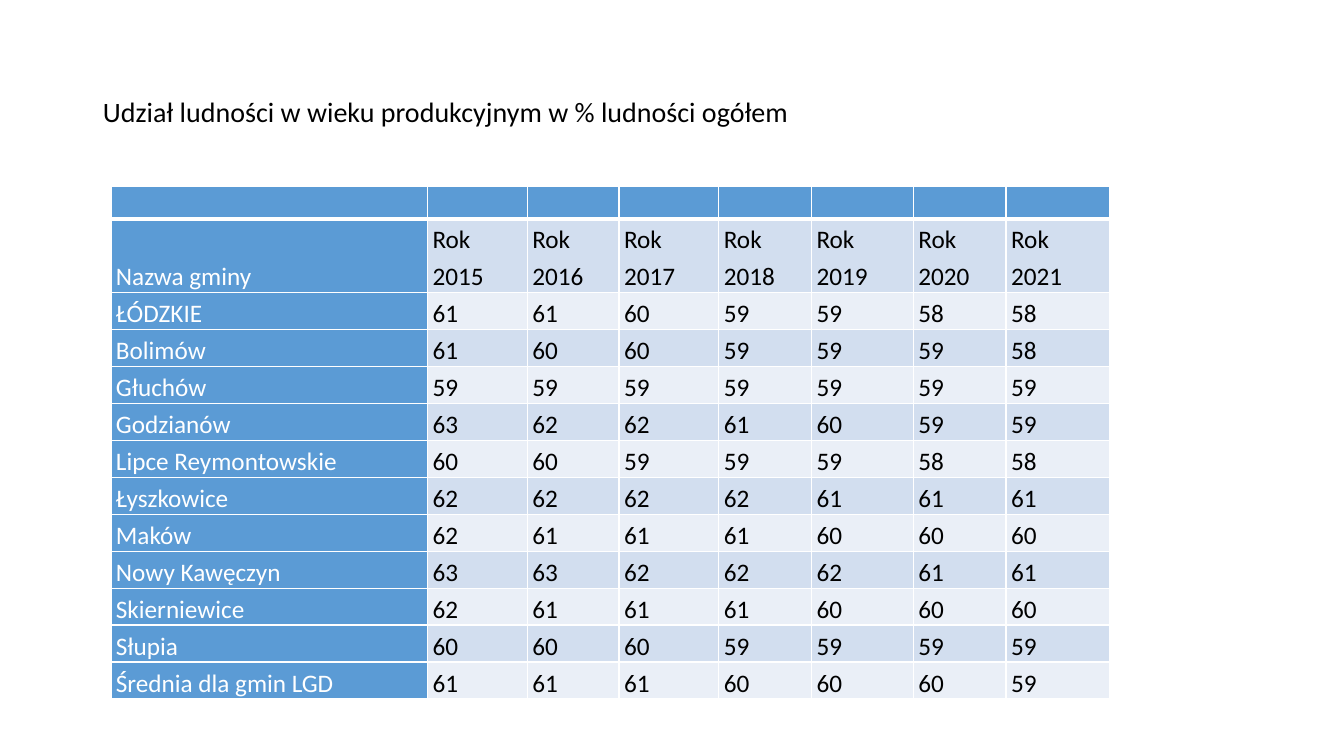
from lxml.etree import SubElement
from pptx import Presentation
from pptx.dml.color import RGBColor
from pptx.enum.text import MSO_ANCHOR, PP_ALIGN
from pptx.oxml.ns import qn
from pptx.util import Inches, Pt

BLUE = RGBColor(0x5B, 0x9B, 0xD5)
BAND_DARK = RGBColor(0xD2, 0xDE, 0xEF)
BAND_LIGHT = RGBColor(0xEA, 0xEF, 0xF7)
WHITE = RGBColor(0xFF, 0xFF, 0xFF)
BLACK = RGBColor(0x00, 0x00, 0x00)

COLUMN_WIDTHS = [3.14, 0.99, 0.91, 0.99, 0.92, 1.01, 0.92, 1.03]
BLANK_HEADER = [""] * len(COLUMN_WIDTHS)
YEARS = ["Nazwa gminy"] + [f"Rok {year}" for year in range(2015, 2022)]
SHARES = [
    ("ŁÓDZKIE", 61, 61, 60, 59, 59, 58, 58),
    ("Bolimów", 61, 60, 60, 59, 59, 59, 58),
    ("Głuchów", 59, 59, 59, 59, 59, 59, 59),
    ("Godzianów", 63, 62, 62, 61, 60, 59, 59),
    ("Lipce Reymontowskie", 60, 60, 59, 59, 59, 58, 58),
    ("Łyszkowice", 62, 62, 62, 62, 61, 61, 61),
    ("Maków", 62, 61, 61, 61, 60, 60, 60),
    ("Nowy Kawęczyn", 63, 63, 62, 62, 62, 61, 61),
    ("Skierniewice", 62, 61, 61, 61, 60, 60, 60),
    ("Słupia", 60, 60, 60, 59, 59, 59, 59),
    ("Średnia dla gmin LGD", 61, 61, 61, 60, 60, 60, 59),
]


class SlideBuilder:
    def __init__(self, slide, font="Calibri"):
        self.slide = slide
        self.font = font

    def add_run(self, paragraph, text, size, color):
        run = paragraph.add_run()
        run.text = text
        run.font.name = self.font
        run.font.size = Pt(size)
        run.font.bold = False
        run.font.color.rgb = color

    def title(self, text, left, top, width, height):
        title = self.slide.shapes.title
        title.left, title.top = Inches(left), Inches(top)
        title.width, title.height = Inches(width), Inches(height)
        title.text_frame.vertical_anchor = MSO_ANCHOR.MIDDLE
        paragraph = title.text_frame.paragraphs[0]
        paragraph.alignment = PP_ALIGN.LEFT
        paragraph.line_spacing = 0.9
        self.add_run(paragraph, text, 20, BLACK)

    def borders(self, cell, top=1, bottom=1):
        properties = cell._tc.get_or_add_tcPr()
        for side, points in (("L", 1), ("R", 1), ("T", top), ("B", bottom)):
            line = SubElement(properties, qn(f"a:ln{side}"), w=str(Pt(points)))
            fill = SubElement(line, qn("a:solidFill"))
            SubElement(fill, qn("a:srgbClr"), val=str(WHITE))

    def cell(self, cell, text, fill, color):
        cell.fill.solid()
        cell.fill.fore_color.rgb = fill
        cell.vertical_anchor = MSO_ANCHOR.BOTTOM
        cell.margin_left = cell.margin_right = Inches(0.05)
        cell.margin_top = cell.margin_bottom = 0
        paragraph = cell.text_frame.paragraphs[0]
        paragraph.alignment = PP_ALIGN.JUSTIFY
        paragraph.line_spacing = 1.2
        paragraph.space_before = paragraph.space_after = Pt(6)
        if text:
            self.add_run(paragraph, text, 18, color)

    def table(self, rows, left, top, height):
        table = self.slide.shapes.add_table(
            len(rows), len(COLUMN_WIDTHS), Inches(left), Inches(top),
            Inches(sum(COLUMN_WIDTHS)), Inches(height)).table
        table.first_col = True
        for column, width in zip(table.columns, COLUMN_WIDTHS):
            column.width = Inches(width)
        for r, values in enumerate(rows):
            table.rows[r].height = Inches(0.66 if r == 1 else 0.32)
            band = BAND_DARK if r % 2 else BAND_LIGHT
            for c, value in enumerate(values):
                cell = table.cell(r, c)
                heading = r == 0 or c == 0
                self.borders(cell, top=3 if r == 1 else 1, bottom=3 if r == 0 else 1)
                self.cell(cell, str(value), BLUE if heading else band,
                          WHITE if heading else BLACK)


def main():
    presentation = Presentation()
    presentation.slide_width = Inches(13.33)
    presentation.slide_height = Inches(7.5)
    title_only = presentation.slide_layouts[5]
    builder = SlideBuilder(presentation.slides.add_slide(title_only))
    builder.title("Udział ludności w wieku produkcyjnym w % ludności ogółem",
                  0.92, 0.4, 11.5, 1.45)
    builder.table([BLANK_HEADER, YEARS, *SHARES], 1.1, 1.85, 5.04)
    presentation.save("out.pptx")


if __name__ == "__main__":
    main()
